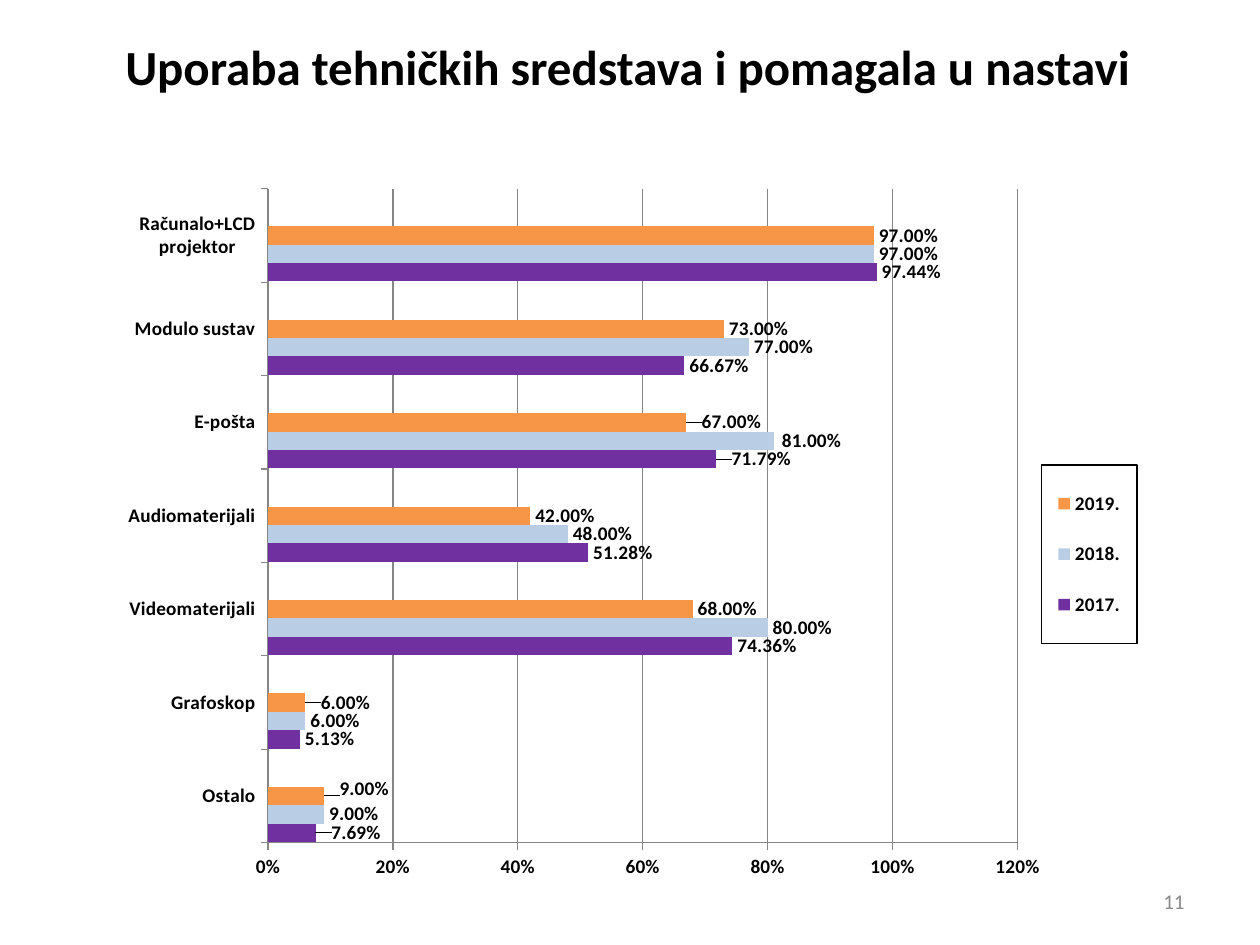
import dataclasses

import pptx
import pptx.chart.data
import pptx.dml.color
import pptx.enum.chart
import pptx.enum.text
import pptx.oxml
import pptx.oxml.ns
import pptx.util

Inches = pptx.util.Inches
Pt = pptx.util.Pt
Align = pptx.enum.text.PP_ALIGN
Anchor = pptx.enum.text.MSO_ANCHOR
Enum = pptx.enum.chart
qn = pptx.oxml.ns.qn


@dataclasses.dataclass(frozen=True)
class Theme:
    font: str = "Calibri"
    ink: str = "000000"
    paper: str = "FFFFFF"
    muted: str = "898989"
    grid: str = "868686"
    violet: str = "7030A0"
    blue: str = "B9CDE5"
    orange: str = "F79646"
    green: str = "C3D69B"
    head: float = 28
    label: float = 11
    foot: float = 12


THEME = Theme()
CATS = ["Ostalo", "Grafoskop", "Videomaterijali", "Audiomaterijali",
        "E-pošta", "Modulo sustav", "Računalo+LCD projektor"]
EMPTY = [None] * len(CATS)
SERIES = [
    ("2017.", THEME.violet,
     [0.0769, 0.0513, 0.7436, 0.5128, 0.7179, 0.6667, 0.9744],
     {0: (0.01, 0), 4: (0.01, 0)}),
    ("2018.", THEME.blue, [0.09, 0.06, 0.8, 0.48, 0.81, 0.77, 0.97],
     {4: (0.003, 0)}),
    ("2019.", THEME.orange, [0.09, 0.06, 0.68, 0.42, 0.67, 0.73, 0.97],
     {0: (0.01, -0.01), 1: (0.01, 0), 4: (0.01, 0)}),
    ("", THEME.orange, EMPTY, {}),
    ("", THEME.green, EMPTY, {}),
]


def color(code):
    return pptx.dml.color.RGBColor.from_string(code)


def node(body):
    tag = body.split(">", 1)[0]
    return pptx.oxml.parse_xml(
        body.replace(tag, f"{tag} {pptx.oxml.ns.nsdecls('c', 'a')}", 1))


def layout(x, y, w=None, h=None, inner=False):
    parts = ['<c:layoutTarget val="inner"/>'] if inner else []
    if w:
        parts += ['<c:xMode val="edge"/>', '<c:yMode val="edge"/>']
    pairs = zip("xywh", (x, y, w, h))
    parts += [f'<c:{key} val="{val}"/>' for key, val in pairs if val is not None]
    return node(f"<c:layout><c:manualLayout>{''.join(parts)}"
                "</c:manualLayout></c:layout>")


def clear(item):
    old = item.find(qn("c:layout"))
    if old is not None:
        item.remove(old)


class Deck:
    def __init__(self, theme):
        self.theme = theme
        self.file = pptx.Presentation()
        self.file.slide_width = Inches(10)
        self.file.slide_height = Inches(7.5)
        self.slide = self.file.slides.add_slide(self.file.slide_layouts[5])

    def style(self, font, size, code, bold):
        font.name = self.theme.font
        font.size = Pt(size)
        font.bold = bold
        font.color.rgb = color(code)

    def strong(self, font):
        self.style(font, self.theme.label, self.theme.ink, True)

    def fill(self, shape, text, size, code, align, bold=False):
        frame = shape.text_frame
        frame.text = text
        frame.word_wrap = True
        frame.vertical_anchor = Anchor.MIDDLE
        line = frame.paragraphs[0]
        line.alignment = align
        self.style(line.runs[0].font, size, code, bold)

    def title(self, text, x, y, w, h):
        shape = self.slide.shapes.title
        shape.left, shape.top, shape.width, shape.height = map(Inches, (x, y, w, h))
        shape.fill.solid()
        shape.fill.fore_color.rgb = color(self.theme.paper)
        self.fill(shape, text, self.theme.head, self.theme.ink, Align.CENTER, True)
        shape.text_frame.auto_size = pptx.enum.text.MSO_AUTO_SIZE.SHAPE_TO_FIT_TEXT

    def number(self, text, x, y, w, h):
        box = self.slide.shapes.add_textbox(*map(Inches, (x, y, w, h)))
        self.fill(box, text, self.theme.foot, self.theme.muted, Align.RIGHT)

    def chart(self, cats, rows, x, y, w, h):
        data = pptx.chart.data.CategoryChartData(number_format="0.00%")
        data.categories = cats
        for name, _, vals, _ in rows:
            data.add_series(name, vals)
        chart = self.slide.shapes.add_chart(
            Enum.XL_CHART_TYPE.BAR_CLUSTERED, *map(Inches, (x, y, w, h)), data).chart
        chart.has_title = False
        self.strong(chart.font)
        plot = chart.plots[0]
        plot.gap_width = 8
        plot.vary_by_categories = False
        for series, (_, code, _, shifts) in zip(plot.series, rows):
            self.series(series, code, shifts)
        self.axes(chart)
        self.legend(chart)
        area = chart._chartSpace.chart.plotArea
        clear(area)
        area.insert(0, layout(0.155, 0.019, 0.722, 0.909, True))

    def series(self, series, code, shifts):
        series.format.fill.solid()
        series.format.fill.fore_color.rgb = color(code)
        labels = series.data_labels
        labels.show_value = True
        labels.number_format = "0.00%"
        labels.number_format_is_linked = False
        labels.position = Enum.XL_LABEL_POSITION.OUTSIDE_END
        self.strong(labels.font)
        for index in shifts:
            label = series.points[index].data_label
            label.position = Enum.XL_LABEL_POSITION.OUTSIDE_END
            self.strong(label.font)
        for item in labels._element.findall(qn("c:dLbl")):
            mark = item.find(qn("c:idx"))
            clear(item)
            mark.addnext(layout(*shifts[int(mark.get("val"))]))

    def axes(self, chart):
        scale = chart.value_axis
        scale.minimum_scale, scale.maximum_scale, scale.major_unit = 0, 1.2, 0.2
        scale.tick_labels.number_format = "0%"
        scale.tick_labels.number_format_is_linked = False
        scale.has_major_gridlines = True
        lines = [scale.major_gridlines.format.line]
        for axis in (scale, chart.category_axis):
            axis.major_tick_mark = Enum.XL_TICK_MARK.OUTSIDE
            self.strong(axis.tick_labels.font)
            lines.append(axis.format.line)
        for line in lines:
            line.color.rgb = color(self.theme.grid)
            line.width = Pt(0.75)

    def legend(self, chart):
        chart.has_legend = True
        legend = chart.legend
        legend.position = Enum.XL_LEGEND_POSITION.RIGHT
        legend.include_in_layout = False
        self.strong(legend.font)
        item = legend._element
        clear(item)
        place = item.find(qn("c:legendPos"))
        place.addnext(layout(0.9, 0.403, 0.092, 0.248))
        for index in (1, 0):
            place.addnext(node(f'<c:legendEntry><c:idx val="{index}"/>'
                               '<c:delete val="1"/></c:legendEntry>'))
        item.find(qn("c:overlay")).addnext(node(
            '<c:spPr><a:ln w="9525"><a:solidFill>'
            f'<a:srgbClr val="{self.theme.ink}"/></a:solidFill></a:ln></c:spPr>'))


def main():
    deck = Deck(THEME)
    deck.title("Uporaba tehničkih sredstava i pomagala u nastavi", 0.35, 0.24, 9.26, 0.57)
    deck.number("11", 7.17, 6.95, 2.33, 0.4)
    deck.chart(CATS, SERIES, 0.85, 1.39, 8.24, 5.71)
    deck.file.save("out.pptx")


if __name__ == "__main__":
    main()
